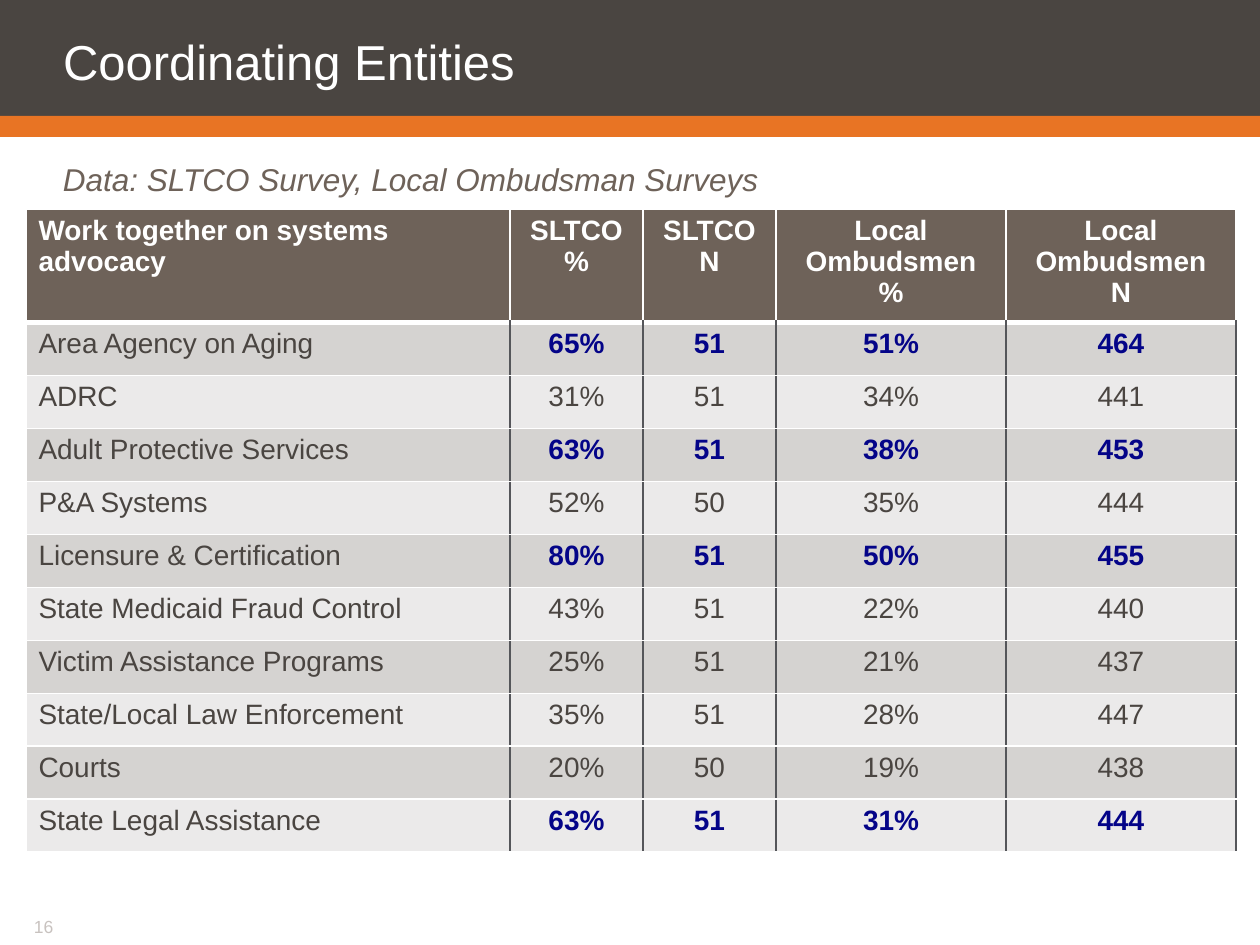
import lxml.etree
import pptx
import pptx.dml.color
import pptx.enum.shapes
import pptx.enum.text
import pptx.oxml.ns
import pptx.util

EMU_PER_PX = 914400 / 126
FONT = "Arial"
COLORS = {
    "band": "4A4541", "stripe": "E87424", "header": "6E6259",
    "dark_row": "D5D3D1", "light_row": "EBEAEA", "rule": "55565A",
    "highlight": "040488", "white": "FFFFFF", "page": "C8C2BF",
}
HEADINGS = ["Work together on systems advocacy", "SLTCO\n%", "SLTCO\nN",
            "Local Ombudsmen\n%", "Local Ombudsmen\nN"]
ENTITIES = [
    ("Area Agency on Aging", "65%", "51", "51%", "464"),
    ("ADRC", "31%", "51", "34%", "441"),
    ("Adult Protective Services", "63%", "51", "38%", "453"),
    ("P&A Systems", "52%", "50", "35%", "444"),
    ("Licensure & Certification", "80%", "51", "50%", "455"),
    ("State Medicaid Fraud Control", "43%", "51", "22%", "440"),
    ("Victim Assistance Programs", "25%", "51", "21%", "437"),
    ("State/Local Law Enforcement", "35%", "51", "28%", "447"),
    ("Courts", "20%", "50", "19%", "438"),
    ("State Legal Assistance", "63%", "51", "31%", "444"),
]
HIGHLIGHTED = {"Area Agency on Aging", "Adult Protective Services",
               "Licensure & Certification", "State Legal Assistance"}
COLUMN_WIDTHS = [484, 133, 133, 230, 230]
HEADER_HEIGHT, ROW_HEIGHT = 111, 53


def px(length):
    """Turn a length in px into EMU."""
    return pptx.util.Emu(round(length * EMU_PER_PX))


def rgb(name):
    """Look up a named colour."""
    return pptx.dml.color.RGBColor.from_string(COLORS[name])


def write(frame, text, size, color, bold=False, italic=False, centred=False,
          line_spacing=None, insets=None, middle=False):
    """Fill a text frame with formatted paragraphs, one for each line."""
    frame.word_wrap = True
    if insets:
        (frame.margin_left, frame.margin_top,
         frame.margin_right, frame.margin_bottom) = map(px, insets)
    anchors = pptx.enum.text.MSO_ANCHOR
    frame.vertical_anchor = anchors.MIDDLE if middle else anchors.TOP
    frame.text = text
    alignments = pptx.enum.text.PP_ALIGN
    for paragraph in frame.paragraphs:
        paragraph.alignment = alignments.CENTER if centred else alignments.LEFT
        if line_spacing:
            paragraph.line_spacing = pptx.util.Pt(line_spacing)
        for run in paragraph.runs:
            run.font.name = FONT
            run.font.size = pptx.util.Pt(size)
            run.font.bold = bold
            run.font.italic = italic
            run.font.color.rgb = rgb(color)


def add_bar(slide, left, top, width, height, color):
    """Draw a plain filled rectangle."""
    bar = slide.shapes.add_shape(pptx.enum.shapes.MSO_SHAPE.RECTANGLE,
                                 px(left), px(top), px(width), px(height))
    bar.shadow.inherit = False
    bar.fill.solid()
    bar.fill.fore_color.rgb = rgb(color)
    bar.line.fill.background()


def add_heading(slide, left, top, width, height):
    """Place the title on its dark band with the stripe at the foot."""
    band_height = height - 21
    add_bar(slide, left, top, width, band_height, "band")
    add_bar(slide, left, top + band_height, width, 21, "stripe")
    title = slide.shapes.title
    title.left, title.top = px(left), px(top)
    title.width, title.height = px(width), px(band_height)
    title.text_frame.auto_size = pptx.enum.text.MSO_AUTO_SIZE.NONE
    write(title.text_frame, "Coordinating Entities", 28, "white",
          line_spacing=28, insets=(63, 15, 13, 0), middle=True)
    slide.shapes._spTree.append(title._element)


def add_label(slide, left, top, width, height, text, **style):
    """Place a text box."""
    label = slide.shapes.add_textbox(px(left), px(top), px(width), px(height))
    write(label.text_frame, text, **style)


def set_borders(cell, **sides):
    """Draw cell borders, each given as a colour name and a width in points."""
    properties = cell._tc.get_or_add_tcPr()
    for side in "LRTB":
        color, width = sides[side]
        line = lxml.etree.SubElement(
            properties, pptx.oxml.ns.qn(f"a:ln{side}"), w=str(pptx.util.Pt(width)))
        fill = lxml.etree.SubElement(line, pptx.oxml.ns.qn("a:solidFill"))
        lxml.etree.SubElement(fill, pptx.oxml.ns.qn("a:srgbClr"), val=COLORS[color])


def format_cell(cell, text, row, column, highlighted):
    """Set the text, borders and fill of one table cell."""
    header = row == 0
    first = column == 0
    color = "white" if header else "highlight" if highlighted and not first else "band"
    write(cell.text_frame, text, 16, color, bold=color != "band", centred=not first)
    set_borders(cell,
                L=("white" if header or first else "rule", 1),
                R=("white" if header else "rule", 1),
                T=("white", 1),
                B=("white", 3 if header else 1))
    cell.fill.solid()
    cell.fill.fore_color.rgb = rgb(
        "header" if header else "dark_row" if row % 2 else "light_row")


def add_entity_table(slide, left, top):
    """Place the table of coordinating entities."""
    records = [HEADINGS, *ENTITIES]
    heights = [HEADER_HEIGHT] + [ROW_HEIGHT] * len(ENTITIES)
    table = slide.shapes.add_table(
        len(records), len(HEADINGS), px(left), px(top),
        px(sum(COLUMN_WIDTHS)), px(sum(heights))).table
    for column, width in zip(table.columns, COLUMN_WIDTHS):
        column.width = px(width)
    for row, (record, height) in enumerate(zip(records, heights)):
        table.rows[row].height = px(height)
        for column, text in enumerate(record):
            format_cell(table.cell(row, column), text, row, column,
                        record[0] in HIGHLIGHTED)


def main():
    """Build the slide and save it."""
    deck = pptx.Presentation()
    deck.slide_width, deck.slide_height = px(1260), px(945)
    slide = deck.slides.add_slide(deck.slide_layouts[5])
    add_heading(slide, 0, 0, 1260, 137)
    add_label(slide, 21, 916, 242, 23, "16", size=10, color="page",
              insets=(13, 0, 13, 6))
    add_entity_table(slide, 26, 209)
    add_label(slide, 0, 151, 1260, 44, "Data: SLTCO Survey, Local Ombudsman Surveys",
              size=18, color="header", italic=True, insets=(63, 9, 0, 0))
    deck.save("out.pptx")


if __name__ == "__main__":
    main()
